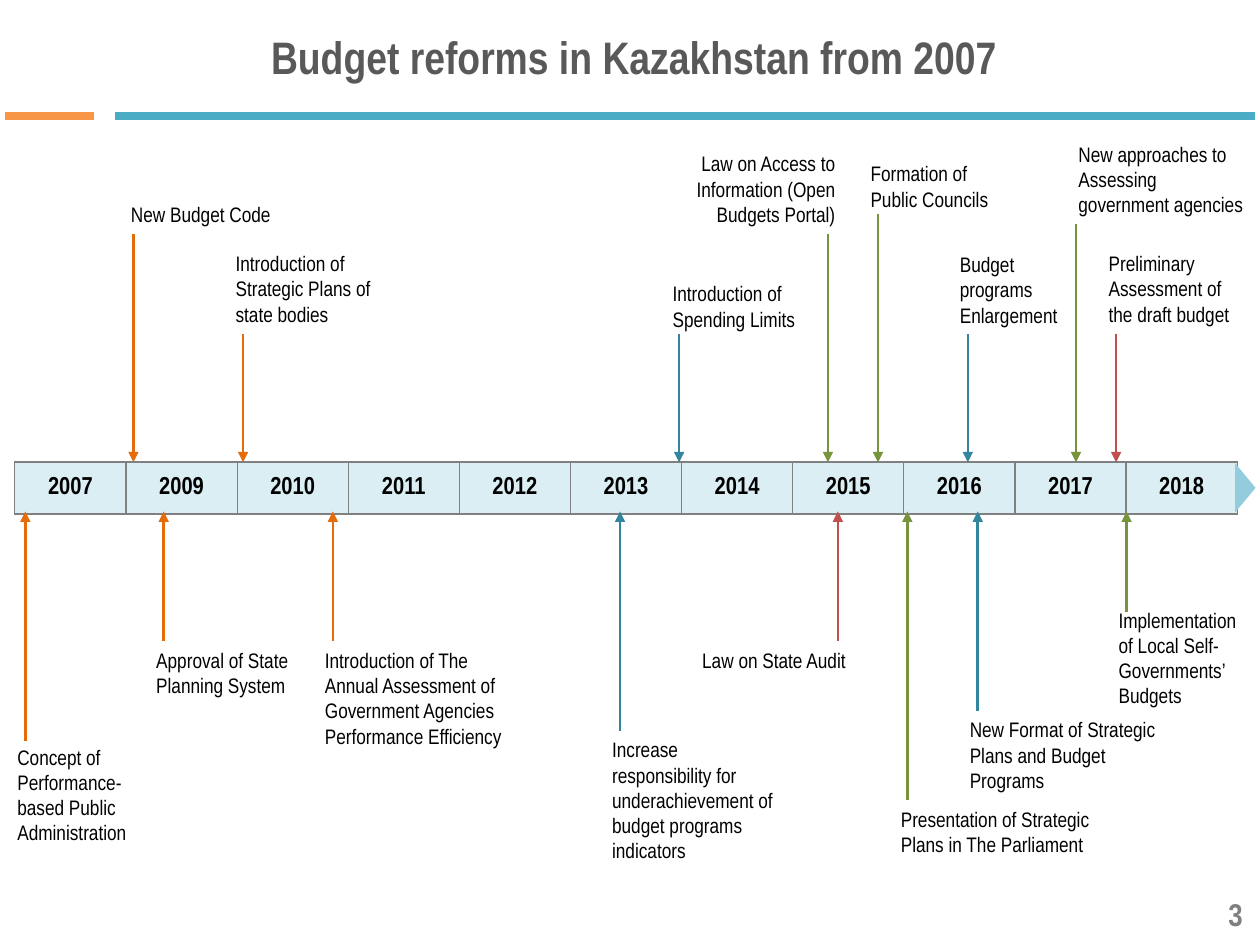
from lxml import etree
from pptx import Presentation
from pptx.dml.color import RGBColor
from pptx.enum.shapes import MSO_CONNECTOR, MSO_SHAPE
from pptx.enum.text import MSO_ANCHOR, PP_ALIGN
from pptx.oxml.ns import qn
from pptx.util import Cm, Pt

LEFT, CENTER, RIGHT = PP_ALIGN.LEFT, PP_ALIGN.CENTER, PP_ALIGN.RIGHT
TOP, MIDDLE = MSO_ANCHOR.TOP, MSO_ANCHOR.MIDDLE
STRAIGHT = MSO_CONNECTOR.STRAIGHT
TRIANGLE = MSO_SHAPE.ISOSCELES_TRIANGLE

FONT = "Arial Narrow"
COLORS = {
    "title": "595959", "grey": "808080", "text": "000000",
    "rule": "4BACC6", "accent": "F79646", "cell": "DBEEF4", "tip": "93CDDD",
    "orange": "E46C0A", "blue": "31859C", "green": "77933C", "red": "C0504D",
}
YEARS = ["2007", *(str(year) for year in range(2009, 2019))]
TABLE_LEFT, TABLE_TOP, TABLE_HEIGHT = 0.3, 9.32, 1.04
YEAR_WIDTH = 2.24
ARROW_END_ABOVE, ARROW_END_BELOW = TABLE_TOP, 10.31

# colour, arrow x, arrow start y, label (left, top, width, height), text, alignment
EVENTS = [
    ("orange", 0.51, 14.94, (0.1, 14.88, 2.79, 2.44),
     "Concept of Performance-based Public Administration", LEFT),
    ("orange", 2.69, 4.72, (2.39, 3.94, 3.71, 0.79), "New Budget Code", LEFT),
    ("orange", 3.3, 12.93, (2.9, 12.93, 3.4, 2.21),
     "Approval of State Planning System", LEFT),
    ("orange", 4.9, 6.73, (4.5, 4.93, 3.61, 1.8),
     "Introduction of Strategic Plans of state bodies", LEFT),
    ("orange", 6.71, 12.93, (6.3, 12.93, 4.39, 2.39),
     "Introduction of The\nAnnual Assessment of Government Agencies Performance Efficiency", LEFT),
    ("blue", 12.5, 14.73, (12.09, 14.73, 3.81, 2.79),
     "Increase responsibility for underachievement of budget programs indicators", LEFT),
    ("blue", 13.69, 6.73, (13.31, 5.54, 3.61, 1.4),
     "Introduction of Spending Limits", LEFT),
    ("green", 16.69, 4.72, (12.7, 2.92, 4.39, 1.8),
     "Law on Access to Information (Open Budgets Portal)", RIGHT),
    ("red", 16.89, 12.93, (13.69, 12.93, 3.61, 0.79), "Law on State Audit", RIGHT),
    ("green", 17.7, 4.32, (17.3, 3.12, 3, 1.19), "Formation of\nPublic Councils", LEFT),
    ("green", 18.29, 16.13, (17.91, 16.13, 4.39, 1.6),
     "Presentation of Strategic Plans in The Parliament", LEFT),
    ("blue", 19.51, 6.73, (19.1, 4.95, 3, 1.78), "Budget programs Enlargement", LEFT),
    ("blue", 19.71, 14.33, (19.3, 14.33, 4.39, 1.8),
     "New Format of Strategic Plans and Budget Programs", LEFT),
    ("green", 21.69, 4.52, (21.49, 2.72, 3.91, 1.75),
     "New approaches to Assessing government agencies", LEFT),
    ("red", 22.5, 6.73, (22.1, 4.93, 3, 1.8),
     "Preliminary Assessment of the draft budget", LEFT),
    ("green", 22.71, 12.34, (22.3, 12.12, 3.1, 2.21),
     "Implementation of Local Self- Governments’ Budgets", LEFT),
]


def rgb(name):
    return RGBColor.from_string(COLORS[name])


def format_text(frame, size, color, bold, align, anchor):
    frame.vertical_anchor = anchor
    for para in frame.paragraphs:
        para.alignment = align
        for run in para.runs:
            run.font.name = FONT
            run.font.size = Pt(size)
            run.font.bold = bold
            run.font.color.rgb = rgb(color)


def add_text(page, place, text, size=12, color="text", bold=False, align=LEFT, anchor=TOP):
    box = page.shapes.add_textbox(*map(Cm, place))
    box.text_frame.word_wrap = True
    box.text_frame.text = text
    format_text(box.text_frame, size, color, bold, align, anchor)
    return box


def add_line(page, start, end, color, width, arrow=False):
    line = page.shapes.add_connector(STRAIGHT, *map(Cm, (*start, *end)))
    line.line.color.rgb = rgb(color)
    line.line.width = Pt(width)
    if arrow:
        etree.SubElement(line.line._get_or_add_ln(), qn("a:tailEnd"), type="triangle")
    etree.SubElement(line._element.spPr, qn("a:effectLst"))


def set_borders(cell, color, widths):
    """Give the cell edges, keyed L, R, T and B, their widths in points."""
    properties = cell._tc.get_or_add_tcPr()
    for position, (side, width) in enumerate(widths.items()):
        edge = etree.Element(qn(f"a:ln{side}"), w=str(Pt(width)))
        fill = etree.SubElement(edge, qn("a:solidFill"))
        etree.SubElement(fill, qn("a:srgbClr"), val=COLORS[color])
        properties.insert(position, edge)


def add_year_table(page):
    table = page.shapes.add_table(
        1, len(YEARS), Cm(TABLE_LEFT), Cm(TABLE_TOP),
        Cm(YEAR_WIDTH * len(YEARS)), Cm(TABLE_HEIGHT)).table
    table.first_row = table.horz_banding = False
    for column, year in enumerate(YEARS):
        table.columns[column].width = Cm(YEAR_WIDTH)
        cell = table.cell(0, column)
        cell.text_frame.text = year
        format_text(cell.text_frame, 14, "text", True, CENTER, TOP)
        cell.vertical_anchor = MIDDLE
        cell.fill.solid()
        cell.fill.fore_color.rgb = rgb("cell")
        set_borders(cell, "grey", {"L": 0.75, "R": 0.75, "T": 1.5, "B": 1.5})


def add_timeline_tip(page):
    tip = page.shapes.add_shape(TRIANGLE, Cm(24.61), Cm(9.63), Cm(0.99), Cm(0.41))
    tip.rotation = 90
    tip.shadow.inherit = False
    tip.fill.solid()
    tip.fill.fore_color.rgb = rgb("tip")
    tip.line.fill.background()


def add_event(page, color, x, start, place, text, align):
    end = ARROW_END_ABOVE if start < TABLE_TOP else ARROW_END_BELOW
    add_line(page, (x, start), (x, end), color, 1.5, arrow=True)
    add_text(page, place, text, align=align)


def main():
    deck = Presentation()
    deck.slide_width, deck.slide_height = Cm(25.4), Cm(19.05)
    page = deck.slides.add_slide(deck.slide_layouts[6])

    title = add_text(page, (0.89, 0.33, 23.8, 1.6), "Budget reforms in Kazakhstan from 2007",
                     26, "title", True, CENTER, MIDDLE)
    title.text_frame.paragraphs[0].space_after = Pt(6)
    add_text(page, (19.38, 17.91, 5.92, 1.02), "3", 18, "grey", True, RIGHT, MIDDLE)
    add_line(page, (2.31, 2.34), (25.3, 2.34), "rule", 4.5)
    add_line(page, (0.1, 2.34), (1.9, 2.34), "accent", 4.5)

    add_year_table(page)
    add_timeline_tip(page)
    for event in EVENTS:
        add_event(page, *event)
    deck.save("out.pptx")


if __name__ == "__main__":
    main()
